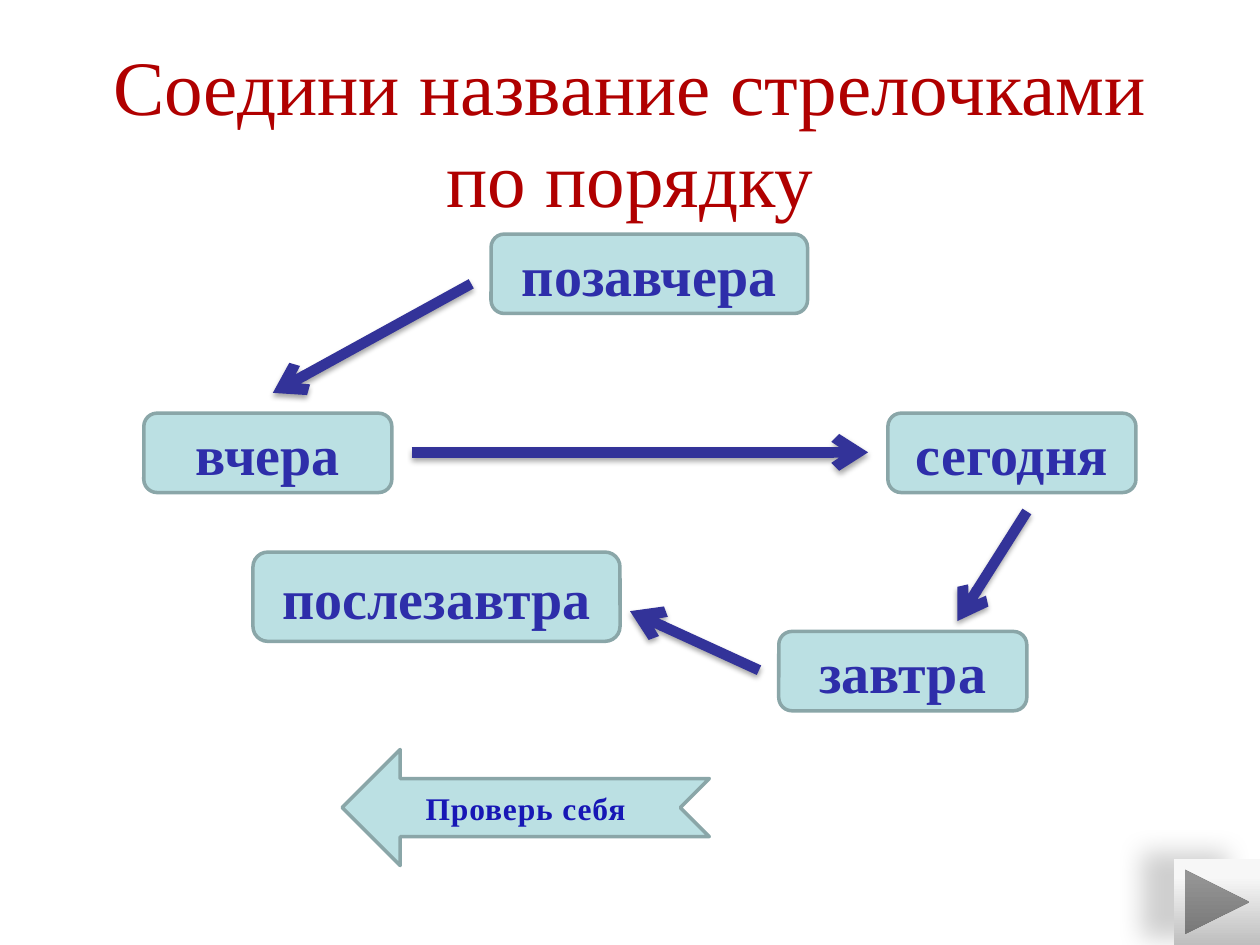
from lxml import etree
from pptx import Presentation
from pptx.dml.color import RGBColor
from pptx.enum.shapes import MSO_CONNECTOR, MSO_SHAPE
from pptx.enum.text import MSO_ANCHOR, PP_ALIGN
from pptx.oxml.ns import qn
from pptx.util import Cm, Pt

ROUND = MSO_SHAPE.ROUNDED_RECTANGLE
NOTCHED = MSO_SHAPE.NOTCHED_RIGHT_ARROW
NEXT = MSO_SHAPE.ACTION_BUTTON_FORWARD_OR_NEXT
STRAIGHT = MSO_CONNECTOR.STRAIGHT
MIDDLE = MSO_ANCHOR.MIDDLE
CENTER = PP_ALIGN.CENTER

FONT = "Times New Roman"
COLORS = {
    "title": "B00000",
    "fill": "BBE0E3",
    "edge": "8AA6A8",
    "word": "2E2EAA",
    "check": "1717B5",
    "arrow": "333399",
    "dark": "BEBEBE",
    "light": "F7F7F7",
    "shadow": "000000",
}


def color(name):
    return RGBColor.from_string(COLORS[name])


def add_shadow(shape, alpha, blur, dist, angle):
    """Alpha in percent, blur and distance in points, angle in degrees."""
    effects = etree.SubElement(shape._element.spPr, qn("a:effectLst"))
    outer = etree.SubElement(
        effects, qn("a:outerShdw"), blurRad=str(Pt(blur)), dist=str(Pt(dist)),
        dir=str(angle * 60000), rotWithShape="0")
    shade = etree.SubElement(outer, qn("a:srgbClr"), val=COLORS["shadow"])
    etree.SubElement(shade, qn("a:alpha"), val=str(alpha * 1000))


class Board:
    """Holds the current slide and draws its elements in one style."""

    def __init__(self, slide):
        self.slide = slide

    def label(self, shape, text, size, ink, bold=True):
        frame = shape.text_frame
        frame.word_wrap = True
        frame.vertical_anchor = MIDDLE
        par = frame.paragraphs[0]
        par.text = text
        par.alignment = CENTER
        par.font.name = FONT
        par.font.size = Pt(size)
        par.font.bold = bold
        par.font.color.rgb = color(ink)
        return par

    def title(self, text, left, top, width, height):
        shape = self.slide.shapes.title
        shape.left, shape.top = Cm(left), Cm(top)
        shape.width, shape.height = Cm(width), Cm(height)
        self.label(shape, text, 44, "title", bold=False)

    def shape(self, kind, left, top, width, height):
        shape = self.slide.shapes.add_shape(
            kind, Cm(left), Cm(top), Cm(width), Cm(height))
        shape.fill.solid()
        shape.fill.fore_color.rgb = color("fill")
        shape.line.color.rgb = color("edge")
        shape.line.width = Pt(2)
        shape.shadow.inherit = False
        return shape

    def word(self, text, left, top, width=5, height=1.6):
        box = self.shape(ROUND, left, top, width, height)
        self.label(box, text, 32, "word")

    def arrow(self, *ends):
        line = self.slide.shapes.add_connector(STRAIGHT, *map(Cm, ends))
        line.line.color.rgb = color("arrow")
        line.line.width = Pt(6)
        edge = line._element.spPr.find(qn("a:ln"))
        etree.SubElement(edge, qn("a:tailEnd"), type="arrow")
        add_shadow(line, 35, 3.1, 1.8, 90)

    def check(self, text, left, top, width, height):
        """Draw the notched arrow, pointing left."""
        sign = self.shape(NOTCHED, left, top, width, height)
        sign._element.spPr.find(qn("a:xfrm")).set("flipH", "1")
        par = self.label(sign, text, 18, "check")
        par.runs[0]._r.get_or_add_rPr().set("spc", "50")

    def button(self, left, top, size):
        shape = self.slide.shapes.add_shape(
            NEXT, Cm(left), Cm(top), Cm(size), Cm(size))
        shape.fill.gradient()
        shape.fill.gradient_angle = 90
        stops = zip(shape.fill.gradient_stops, (("dark", 0), ("light", 0.8)))
        for stop, (name, place) in stops:
            stop.color.rgb = color(name)
            stop.position = place
        shape.line.fill.background()
        add_shadow(shape, 18, 14.5, 19, 192)


def main():
    deck = Presentation()
    deck.slide_width, deck.slide_height = Cm(25.4), Cm(19.05)
    board = Board(deck.slides.add_slide(deck.slide_layouts[5]))

    board.title("Соедини название стрелочками по порядку", 1.27, 0.76, 22.86, 3.76)

    board.word("завтра", 15.7, 12.73)
    board.word("позавчера", 9.9, 4.72, width=6.38)
    board.word("вчера", 2.9, 8.33)
    board.word("сегодня", 17.9, 8.33)
    board.word("послезавтра", 5.1, 11.13, width=7.4, height=1.8)

    board.arrow(20.7, 10.31, 19.3, 12.52)
    board.arrow(15.3, 13.51, 12.7, 12.32)
    board.arrow(9.5, 5.72, 5.5, 7.92)
    board.arrow(8.3, 9.12, 17.5, 9.12)

    board.check("Проверь себя", 6.9, 15.11, 7.4, 2.34)
    board.button(23.67, 17.32, 1.73)

    deck.save("out.pptx")


if __name__ == "__main__":
    main()
